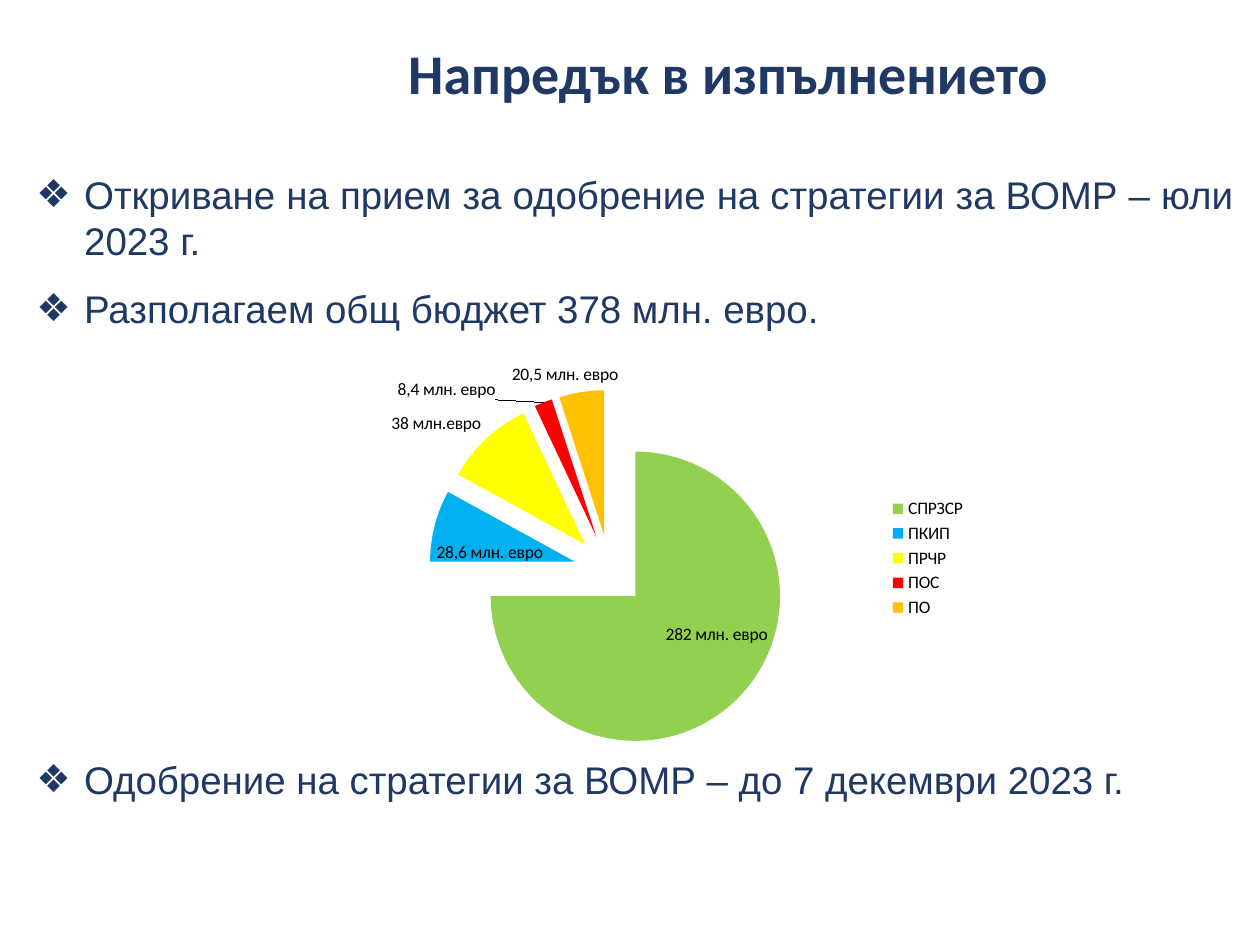
from lxml import etree
from pptx import Presentation
from pptx.chart.data import CategoryChartData
from pptx.dml.color import RGBColor
from pptx.enum.chart import XL_CHART_TYPE, XL_LABEL_POSITION, XL_LEGEND_POSITION
from pptx.enum.text import MSO_ANCHOR, PP_ALIGN
from pptx.oxml import parse_xml
from pptx.oxml.ns import nsdecls, qn
from pptx.util import Inches, Pt

PIE = XL_CHART_TYPE.PIE_EXPLODED
CENTER, OUTSIDE = XL_LABEL_POSITION.CENTER, XL_LABEL_POSITION.OUTSIDE_END
RIGHT = XL_LEGEND_POSITION.RIGHT
MIDDLE, TOP = MSO_ANCHOR.MIDDLE, MSO_ANCHOR.TOP
ALIGN_CENTER, JUSTIFY = PP_ALIGN.CENTER, PP_ALIGN.JUSTIFY

NAVY = RGBColor(0x20, 0x38, 0x64)
BLACK = RGBColor(0x00, 0x00, 0x00)
GREEN = RGBColor(0x92, 0xD0, 0x50)
BLUE = RGBColor(0x00, 0xB0, 0xF0)
YELLOW = RGBColor(0xFF, 0xFF, 0x00)
RED = RGBColor(0xFF, 0x00, 0x00)
ORANGE = RGBColor(0xFF, 0xC0, 0x00)

TITLE_FONT = {"name": "Calibri", "size": Pt(32), "bold": True}
BODY_FONT = {"name": "Arial", "size": Pt(22)}
CHART_FONT = {"name": "Calibri", "size": Pt(10)}
TITLE_FORMAT = {"alignment": ALIGN_CENTER}
BODY_FORMAT = {"alignment": JUSTIFY, "space_after": Pt(12)}

BUDGETS = [
    ("СПРЗСР", 0.75, GREEN, "282 млн. евро", CENTER, (0.04, -0.03)),
    ("ПКИП", 0.08, BLUE, "28,6 млн. евро", CENTER, (-0.02, 0.02)),
    ("ПРЧР", 0.1, YELLOW, "38 млн.евро", OUTSIDE, None),
    ("ПОС", 0.02, RED, "8,4 млн. евро", OUTSIDE, (-0.06, 0.01)),
    ("ПО", 0.05, ORANGE, "20,5 млн. евро", OUTSIDE, (0.05, 0)),
]


def set_values(target, values):
    """Set each named attribute of the target."""
    for name, value in values.items():
        setattr(target, name, value)


def set_font(font, values, color):
    """Apply font values and a colour."""
    set_values(font, values)
    font.color.rgb = color


def add_bullet(paragraph):
    """Give a paragraph a hanging diamond bullet."""
    properties = paragraph._p.get_or_add_pPr()
    properties.set("marL", str(Inches(0.38)))
    properties.set("indent", str(-Inches(0.38)))
    etree.SubElement(properties, qn("a:buFont")).set("typeface", "Arial")
    etree.SubElement(properties, qn("a:buChar")).set("char", "❖")


def add_text(slide, box, lines, font, paragraph_format, anchor=TOP, bulleted=False):
    """Fill a wrapped text box with one paragraph for each line."""
    frame = slide.shapes.add_textbox(*box).text_frame
    set_values(frame, {"word_wrap": True, "vertical_anchor": anchor})
    for index, line in enumerate(lines):
        paragraph = frame.add_paragraph() if index else frame.paragraphs[0]
        set_values(paragraph, paragraph_format)
        if bulleted:
            add_bullet(paragraph)
        run = paragraph.add_run()
        run.text = line
        set_font(run.font, font, NAVY)


def manual_layout(values):
    """Build a chart layout element from its named values."""
    parts = "".join(f'<c:{name} val="{value}"/>' for name, value in values.items())
    return parse_xml(
        f'<c:layout {nsdecls("c")}><c:manualLayout>{parts}</c:manualLayout></c:layout>'
    )


def label_point(point, text, position, offset):
    """Write a slice label and shift it from its usual place."""
    label = point.data_label
    run = label.text_frame.paragraphs[0].add_run()
    run.text = text
    set_font(run.font, CHART_FONT, BLACK)
    label.position = position
    if offset:
        element = label._dLbl
        for layout in element.findall(qn("c:layout")):
            element.remove(layout)
        element.find(qn("c:idx")).addnext(manual_layout(dict(zip("xy", offset))))


def add_budget_chart(slide, box):
    """Draw the exploded pie of the budget by programme."""
    data = CategoryChartData(number_format="0%")
    data.categories = [budget[0] for budget in BUDGETS]
    data.add_series("Series 1", [budget[1] for budget in BUDGETS])
    chart = slide.shapes.add_chart(PIE, *box, data).chart
    set_values(chart, {"has_title": False, "has_legend": True})
    set_font(chart.font, CHART_FONT, BLACK)
    set_values(chart.legend, {"position": RIGHT, "include_in_layout": False})

    plot = chart.plots[0]
    set_values(plot, {"vary_by_categories": True, "has_data_labels": True})
    set_values(plot.data_labels, {"show_value": True, "show_percentage": False,
                                  "number_format": "0%",
                                  "number_format_is_linked": False})
    series = plot.series[0]
    series.data_labels.show_value = True
    for element in series._element.findall(qn("c:explosion")):
        element.set("val", "25")
    for index, (_, _, color, text, position, offset) in enumerate(BUDGETS):
        point = series.points[index]
        point.format.fill.solid()
        point.format.fill.fore_color.rgb = color
        label_point(point, text, position, offset)

    area = chart._chartSpace.chart.plotArea
    for layout in area.findall(qn("c:layout")):
        area.remove(layout)
    area.insert(0, manual_layout({"layoutTarget": "inner", "xMode": "edge",
                                  "yMode": "edge", "x": 0.27, "y": 0.1,
                                  "w": 0.48, "h": 0.86}))


def main():
    """Build and save the progress slide."""
    presentation = Presentation()
    set_values(presentation, {"slide_width": Inches(10), "slide_height": Inches(7.5)})
    slide = presentation.slides.add_slide(presentation.slide_layouts[6])
    add_text(slide, (Inches(1.74), Inches(0), Inches(8.08), Inches(1.15)),
             ["Напредък в изпълнението"], TITLE_FONT, TITLE_FORMAT, MIDDLE)
    add_text(slide, (Inches(0.19), Inches(1.31), Inches(9.7), Inches(1.45)),
             ["Откриване на прием за одобрение на стратегии за ВОМР – юли 2023 г.",
              "Разполагаем общ бюджет 378 млн. евро."],
             BODY_FONT, BODY_FORMAT, bulleted=True)
    add_text(slide, (Inches(0.19), Inches(5.95), Inches(9.7), Inches(0.5)),
             ["Одобрение на стратегии за ВОМР – до 7 декември 2023 г."],
             BODY_FONT, BODY_FORMAT, bulleted=True)
    add_budget_chart(slide, (Inches(1.79), Inches(2.76), Inches(5.98), Inches(3.34)))
    presentation.save("out.pptx")


if __name__ == "__main__":
    main()
